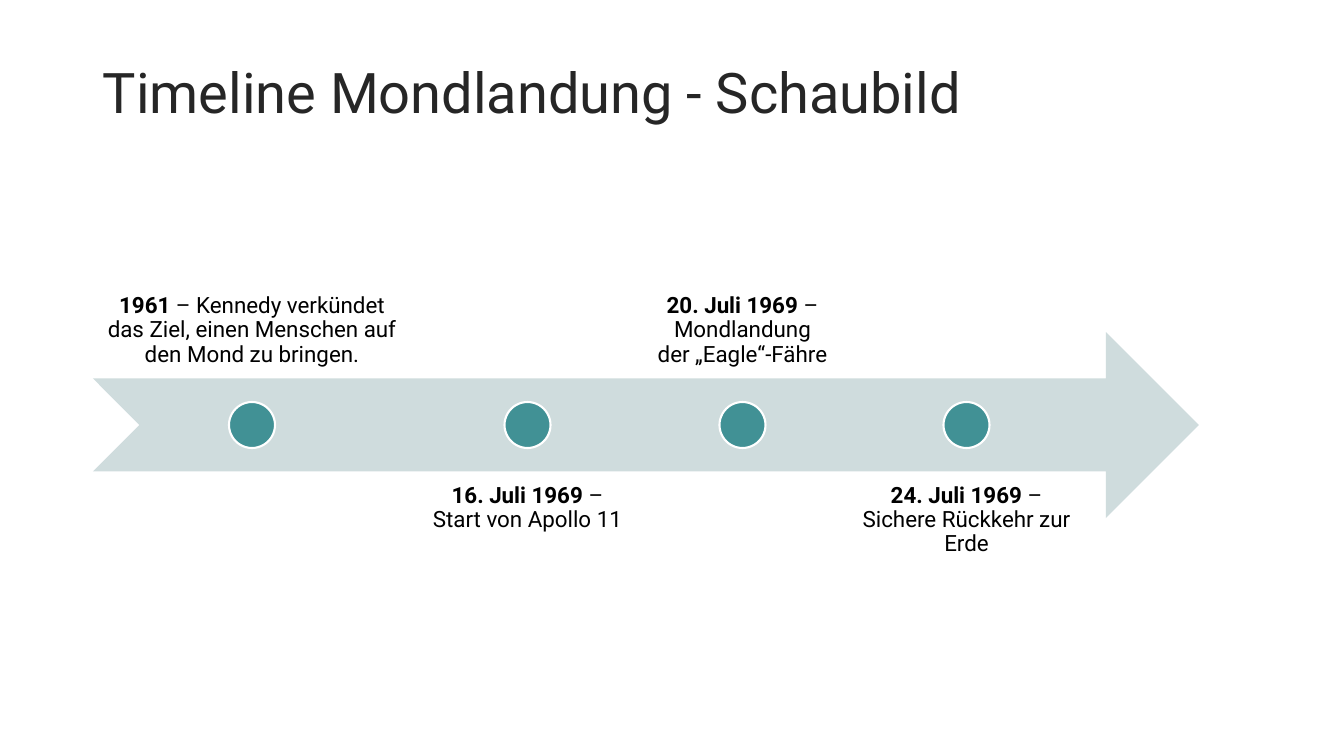
from pptx import Presentation
from pptx.dml.color import RGBColor
from pptx.enum.shapes import MSO_SHAPE
from pptx.enum.text import MSO_ANCHOR, PP_ALIGN
from pptx.util import Pt

TITLE = "Timeline Mondlandung - Schaubild"
# date, event, label width in px
EVENTS = [
    ("1961", " – Kennedy verkündet das Ziel, einen Menschen auf den Mond zu bringen.", 318),
    ("16. Juli 1969", " – Start von Apollo 11", 225),
    ("20. Juli 1969", " – Mondlandung der „Eagle“-Fähre", 197),
    ("24. Juli 1969", " – Sichere Rückkehr zur Erde", 243),
]

FONT = "Roboto"
LEFT = 93
ARROW_TOP, ARROW_WIDTH, ARROW_HEIGHT = 332, 1106, 186
LABEL_GAP, LABEL_INSET = 4, 12
UPPER_TOP, LOWER_TOP = 193, 472
DOT_SIZE = 46


def px(length):
    return round(length * 914400 / 100.8)


def color(value):
    return RGBColor.from_string(value)


def add_shape(slide, preset, left, top, width, height, fill):
    shape = slide.shapes.add_shape(preset, px(left), px(top), px(width), px(height))
    shape.shadow.inherit = False
    shape.fill.solid()
    shape.fill.fore_color.rgb = color(fill)
    shape.line.fill.background()
    return shape


def add_text(slide, left, top, width, height, anchor, size, font_color, runs):
    """Add a one-paragraph text box; runs are (text, bold) pairs."""
    box = slide.shapes.add_textbox(px(left), px(top), px(width), px(height))
    frame = box.text_frame
    frame.word_wrap = True
    frame.vertical_anchor = anchor
    paragraph = frame.paragraphs[0]
    paragraph.line_spacing = 0.9
    paragraph.font.name = FONT
    paragraph.font.size = Pt(size)
    paragraph.font.color.rgb = color(font_color)
    for text, bold in runs:
        run = paragraph.add_run()
        run.text = text
        run.font.bold = bold
    return frame


def add_event(slide, left, width, above, date, event):
    top, anchor = (UPPER_TOP, MSO_ANCHOR.BOTTOM) if above else (LOWER_TOP, MSO_ANCHOR.TOP)
    frame = add_text(slide, left, top, width, ARROW_HEIGHT, anchor, 16, "000000",
                     [(date, True), (event, False)])
    frame.margin_left = frame.margin_right = px(LABEL_INSET)
    frame.margin_top = frame.margin_bottom = px(LABEL_INSET)
    frame.paragraphs[0].alignment = PP_ALIGN.CENTER
    frame.paragraphs[0].space_after = Pt(5.6)

    dot = add_shape(slide, MSO_SHAPE.OVAL, left + (width - DOT_SIZE) / 2,
                    ARROW_TOP + (ARROW_HEIGHT - DOT_SIZE) / 2, DOT_SIZE, DOT_SIZE, "419195")
    dot.line.color.rgb = color("FFFFFF")
    dot.line.width = Pt(1.5)


def main():
    presentation = Presentation()
    presentation.slide_width, presentation.slide_height = px(1344), px(756)
    slide = presentation.slides.add_slide(presentation.slide_layouts[6])

    add_text(slide, LEFT, 40, 1159, 110, MSO_ANCHOR.MIDDLE, 40, "262626", [(TITLE, False)])
    add_shape(slide, MSO_SHAPE.NOTCHED_RIGHT_ARROW, LEFT, ARROW_TOP,
              ARROW_WIDTH, ARROW_HEIGHT, "CFDCDD")

    left = LEFT
    for index, (date, event, width) in enumerate(EVENTS):
        add_event(slide, left, width, index % 2 == 0, date, event)
        left += width + LABEL_GAP

    presentation.save("out.pptx")


if __name__ == "__main__":
    main()
